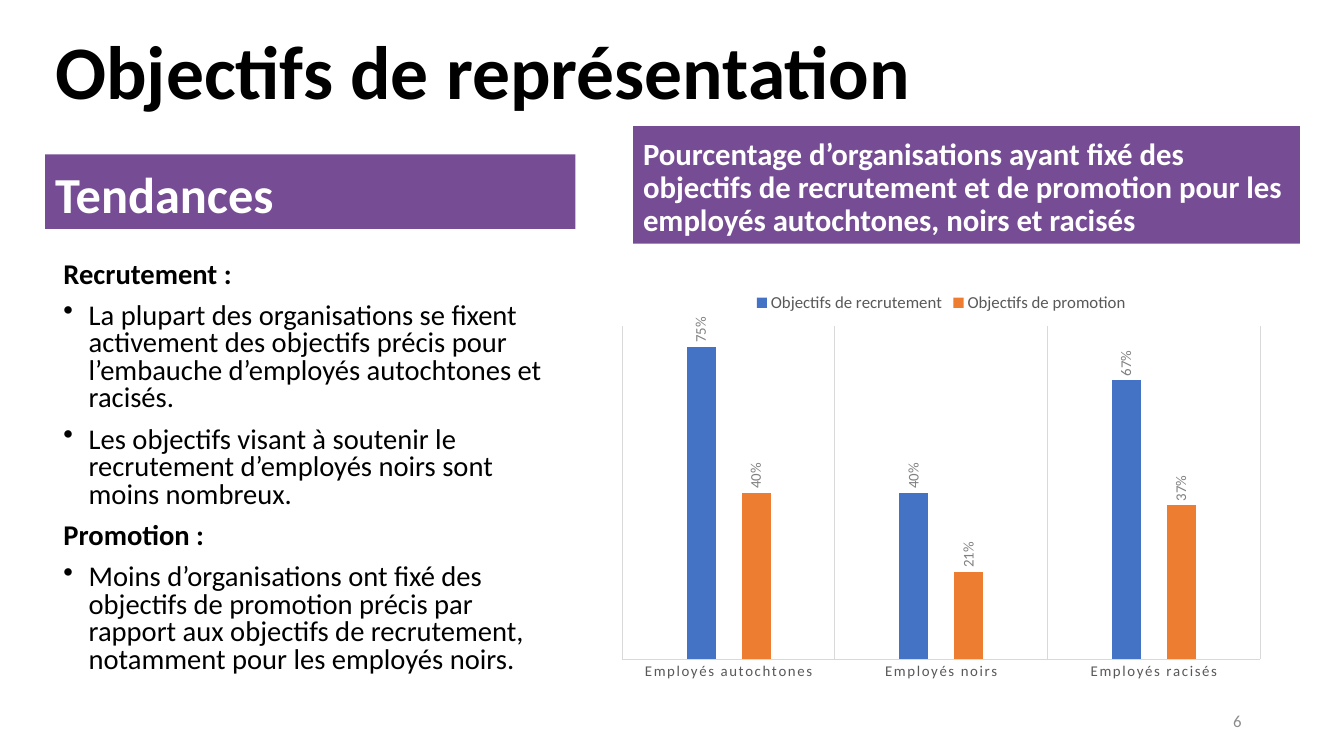
import pptx
import pptx.chart.data
import pptx.dml.color
import pptx.enum.chart
import pptx.enum.shapes
import pptx.enum.text
import pptx.oxml
import pptx.oxml.ns
import pptx.util
from lxml import etree

PURPLE, WHITE, BLACK = "764D94", "FFFFFF", "000000"
GREY, LABEL_GREY, RULE_GREY = "595959", "808080", "D9D9D9"
ALIGN = pptx.enum.text.PP_ALIGN
ANCHOR = pptx.enum.text.MSO_ANCHOR
qn = pptx.oxml.ns.qn


def px(n):
    return pptx.util.Emu(n * 9525)


def rgb(colour):
    return pptx.dml.color.RGBColor.from_string(colour)


class Deck:
    font = "Calibri"

    def __init__(self, width, height):
        self.prs = pptx.Presentation()
        self.prs.slide_width, self.prs.slide_height = px(width), px(height)

    def add_slide(self):
        self.s = self.prs.slides.add_slide(self.prs.slide_layouts[5])

    def style(self, font, size, colour, bold=False):
        font.name, font.size, font.bold = self.font, pptx.util.Pt(size), bold
        font.color.rgb = rgb(colour)

    def paragraph(self, p, text, size, colour, bold=False, align=ALIGN.LEFT,
                  line=0.9, before=10):
        p.text = text
        p.alignment, p.line_spacing = align, line
        p.space_before = pptx.util.Pt(before)
        self.style(p.font, size, colour, bold)

    def frame(self, sp, anchor):
        tf = sp.text_frame
        tf.word_wrap, tf.vertical_anchor = True, anchor
        tf.auto_size = pptx.enum.text.MSO_AUTO_SIZE.NONE
        return tf

    def title(self, box, text, size):
        sp = self.s.shapes.title
        sp.left, sp.top, sp.width, sp.height = map(px, box)
        tf = self.frame(sp, ANCHOR.MIDDLE)
        self.paragraph(tf.paragraphs[0], text, size, BLACK, True, before=0)

    def banner(self, box, text, size):
        rect = pptx.enum.shapes.MSO_SHAPE.RECTANGLE
        sp = self.s.shapes.add_shape(rect, *map(px, box))
        sp.shadow.inherit = False
        sp.fill.solid()
        sp.fill.fore_color.rgb = rgb(PURPLE)
        sp.line.fill.background()
        tf = self.frame(sp, ANCHOR.BOTTOM)
        self.paragraph(tf.paragraphs[0], text, size, WHITE, True)

    def text(self, box, text, size, colour, align):
        sp = self.s.shapes.add_textbox(*map(px, box))
        tf = self.frame(sp, ANCHOR.MIDDLE)
        self.paragraph(tf.paragraphs[0], text, size, colour, align=align,
                       line=1.0, before=0)

    def sections(self, box, sections, size):
        sp = self.s.shapes.add_textbox(*map(px, box))
        tf = self.frame(sp, ANCHOR.TOP)
        p = tf.paragraphs[0]
        for heading, points in sections:
            if p is None:
                p = tf.add_paragraph()
            self.paragraph(p, heading, size, BLACK, True, line=0.8)
            for point in points:
                p = tf.add_paragraph()
                self.paragraph(p, point, size, BLACK, line=0.8)
                self.bullet(p)
            p = None

    def bullet(self, p):
        pPr = p._p.get_or_add_pPr()
        pPr.set("marL", str(px(24)))
        pPr.set("indent", str(px(-24)))
        mark = pptx.oxml.parse_xml(
            f'<a:buChar {pptx.oxml.ns.nsdecls("a")} char="•"/>')
        pPr.find(qn("a:defRPr")).addprevious(mark)

    def column_chart(self, box, categories, series):
        data = pptx.chart.data.CategoryChartData(number_format="0%")
        data.categories = categories
        for name, values, _ in series:
            data.add_series(name, values)
        kinds = pptx.enum.chart
        chart = self.s.shapes.add_chart(
            kinds.XL_CHART_TYPE.COLUMN_CLUSTERED, *map(px, box), data).chart
        self.style(chart.font, 10, BLACK)
        chart.has_title = False

        # Legend
        chart.has_legend = True
        chart.legend.position = kinds.XL_LEGEND_POSITION.TOP
        chart.legend.include_in_layout = False
        self.style(chart.legend.font, 12, GREY)

        # Axes
        val = chart.value_axis
        val.minimum_scale, val.maximum_scale = 0, 0.8
        val.has_major_gridlines = val.visible = False
        cat = chart.category_axis
        cat.major_tick_mark = kinds.XL_TICK_MARK.NONE
        cat.has_major_gridlines = True
        for line in (cat.format.line, cat.major_gridlines.format.line):
            line.color.rgb = rgb(RULE_GREY)
            line.width = pptx.util.Pt(0.75)
        self.style(cat.tick_labels.font, 10.6, GREY)
        cat._element.find(".//" + qn("a:defRPr")).set("spc", "120")

        # Columns and their upright labels
        plot = chart.plots[0]
        plot.gap_width, plot.overlap, plot.vary_by_categories = 444, -90, False
        for ser, (_, _, colour) in zip(plot.series, series):
            ser.format.fill.solid()
            ser.format.fill.fore_color.rgb = rgb(colour)
            labels = ser.data_labels
            labels.show_value = True
            labels.number_format, labels.number_format_is_linked = "0%", False
            labels.position = kinds.XL_LABEL_POSITION.OUTSIDE_END
            self.style(labels.font, 10.6, LABEL_GREY)
            body = labels._element.find(".//" + qn("a:bodyPr"))
            body.set("rot", "-5400000")
            body.set("vert", "horz")
        self.plot_layout(chart, x=0.02, y=0.11, w=0.96, h=0.82)

    def plot_layout(self, chart, **fractions):
        area = chart._chartSpace.find(".//" + qn("c:plotArea"))
        layout = area.find(qn("c:layout"))
        if layout is None:
            layout = etree.Element(qn("c:layout"))
            area.insert(0, layout)
        manual = etree.SubElement(layout, qn("c:manualLayout"))
        settings = {"layoutTarget": "inner", "xMode": "edge", "yMode": "edge",
                    **fractions}
        for tag, value in settings.items():
            etree.SubElement(manual, qn("c:" + tag)).set("val", str(value))


SECTIONS = [
    ("Recrutement :", [
        "La plupart des organisations se fixent activement des objectifs "
        "précis pour l’embauche d’employés autochtones et racisés.",
        "Les objectifs visant à soutenir le recrutement d’employés noirs "
        "sont moins nombreux."]),
    ("Promotion :", [
        "Moins d’organisations ont fixé des objectifs de promotion précis "
        "par rapport aux objectifs de recrutement, notamment pour les "
        "employés noirs."]),
]
CATEGORIES = ["Employés autochtones", "Employés noirs", "Employés racisés"]
SERIES = [
    ("Objectifs de recrutement", (0.75, 0.40, 0.67), "4472C4"),
    ("Objectifs de promotion", (0.40, 0.21, 0.37), "ED7D31"),
]


def main():
    deck = Deck(1280, 720)
    deck.add_slide()
    deck.title((43, 23, 1104, 97), "Objectifs de représentation", 54)

    # Trends
    deck.banner((43, 147, 505, 71), "Tendances", 36)
    deck.sections((51, 245, 482, 433), SECTIONS, 20.4)

    # Share of organisations with targets
    deck.column_chart((580, 268, 633, 387), CATEGORIES, SERIES)
    deck.banner((603, 120, 635, 112),
                "Pourcentage d’organisations ayant fixé des objectifs de "
                "recrutement et de promotion pour les employés autochtones, "
                "noirs et racisés", 22)

    # Page number
    deck.text((904, 667, 288, 38), "6", 12, "8C8C8C", ALIGN.RIGHT)
    deck.prs.save("out.pptx")


if __name__ == "__main__":
    main()
